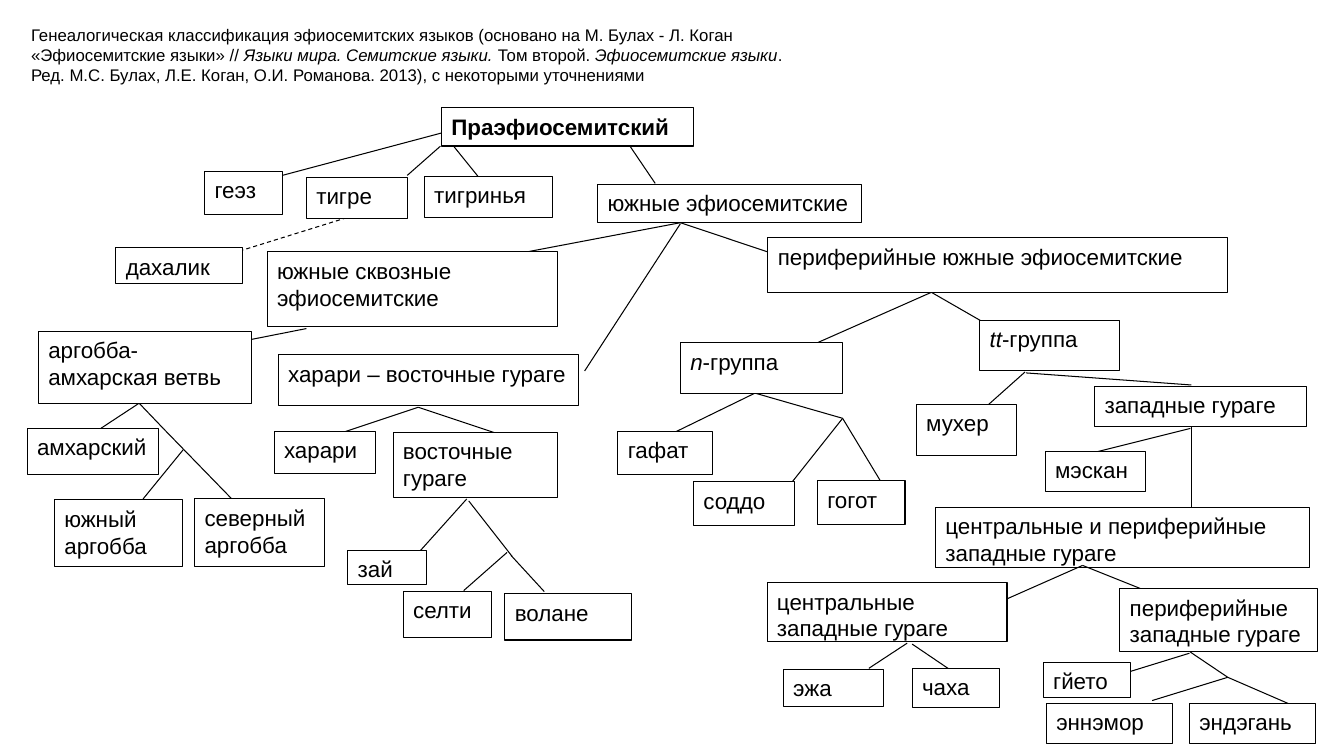
import pptx
import pptx.dml.color
import pptx.enum.dml
import pptx.enum.shapes
import pptx.enum.text
import pptx.oxml.ns
import pptx.util
from lxml import etree

Pt = pptx.util.Pt
BLACK = pptx.dml.color.RGBColor(0, 0, 0)
WHITE = pptx.dml.color.RGBColor(255, 255, 255)
FONT = "Arial"


def write_text(frame, text, size, bold=False):
    """Newlines part the paragraphs, asterisks enclose italics."""
    for index, line in enumerate(text.split("\n")):
        paragraph = frame.paragraphs[0] if index == 0 else frame.add_paragraph()
        paragraph.alignment = pptx.enum.text.PP_ALIGN.LEFT
        for part, words in enumerate(line.split("*")):
            if not words:
                continue
            run = paragraph.add_run()
            run.text = words
            run.font.name = FONT
            run.font.size = Pt(size)
            run.font.color.rgb = BLACK
            run.font.bold = bold
            run.font.italic = part % 2 == 1


def add_language(slide, box, name, x, y, width, height, border=0.75, bold=False):
    language = slide.shapes.add_shape(
        pptx.enum.shapes.MSO_SHAPE.RECTANGLE,
        Pt(box[0] + x), Pt(box[1] + y), Pt(width), Pt(height))
    language.shadow.inherit = False
    language.fill.solid()
    language.fill.fore_color.rgb = WHITE
    language.line.color.rgb = BLACK
    language.line.width = Pt(border)
    frame = language.text_frame
    frame.word_wrap = True
    frame.vertical_anchor = pptx.enum.text.MSO_ANCHOR.TOP
    write_text(frame, name, 16, bold)


def add_branch(slide, box, x1, y1, x2, y2, dashed=False):
    left, top = box
    branch = slide.shapes.add_connector(
        pptx.enum.shapes.MSO_CONNECTOR.STRAIGHT,
        Pt(left + x1), Pt(top + y1), Pt(left + x2), Pt(top + y2))
    branch.line.color.rgb = BLACK
    branch.line.width = Pt(0.75)
    if dashed:
        branch.line.dash_style = pptx.enum.dml.MSO_LINE.DASH
    etree.SubElement(branch._element.spPr, pptx.oxml.ns.qn("a:effectLst"))


def draw_tree(slide, box, branches, languages):
    for branch in branches:
        add_branch(slide, box, *branch)
    for language in languages:
        add_language(slide, box, *language)


def draw_heading(slide, box):
    heading = slide.shapes.add_textbox(*(Pt(length) for length in box))
    frame = heading.text_frame
    frame.word_wrap = False
    frame.vertical_anchor = pptx.enum.text.MSO_ANCHOR.MIDDLE
    write_text(
        frame,
        "Генеалогическая классификация эфиосемитских языков (основано на М. Булах - Л. Коган\n"
        "«Эфиосемитские языки» // *Языки мира. Семитские языки. *Том второй. "
        "*Эфиосемитские языки*.\n"
        "Ред. М.С. Булах, Л.Е. Коган, О.И. Романова. 2013), с некоторыми уточнениями",
        12)


def draw_proto_ethiosemitic(slide, box):
    draw_tree(slide, box, [
        (235.4, 25, 121.6, 55.3),
        (234.6, 34.4, 210.9, 55.3),
        (244, 34.4, 262, 56.7),
        (370, 34.4, 388, 61),
        (406, 89.1, 216.6, 125.1),
        (406, 89.1, 468.6, 110),
        (406, 89.8, 337.6, 195),
        (167.7, 85.5, 93.5, 108.6, True),
    ], [
        ("Праэфиосемитский", 235.4, 7, 180, 27.4, 1, True),
        ("южные эфиосемитские", 347, 61.8, 188.6, 27.4),
        ("геэз", 66.2, 52.4, 55.4, 31),
        ("тигре", 138.9, 56.7, 72, 29.5),
        ("тигринья", 223.1, 56, 91.4, 29.5),
        ("дахалик", 2.8, 107.1, 90.7, 25.2),
    ])


def draw_transversal_south(slide, box):
    draw_tree(slide, box, [
        (200.9, 59.7, 98.6, 79.9),
        (81.4, 113, 54, 131),
        (81.4, 113, 98.6, 131),
        (98.6, 131, 147.6, 181.4),
        (113, 146.1, 84.2, 181.4),
    ], [
        ("южные сквозные эфиосемитские", 172.8, 5, 207.4, 53.3),
        ("аргобба-амхарская ветвь", 9.4, 61.9, 152.6, 51.1),
        ("амхарский", 1.4, 131, 93.6, 33.1, 0.25),
        ("южный аргобба", 20.9, 182.1, 91.4, 47.5),
        ("северный аргобба", 121, 181.4, 92.9, 48.2),
    ])


def draw_harari_east_gurage(slide, box):
    draw_tree(slide, box, [
        (103.8, 40.9, 49.8, 58.9),
        (103.8, 40.9, 157.8, 58.9),
        (138.4, 106.4, 100.9, 148.2),
        (139.8, 107.8, 170.8, 147.4),
        (167.2, 144.6, 136.2, 171.9),
        (170, 146.7, 193.8, 172.6),
    ], [
        ("харари – восточные гураге", 3.7, 3.4, 214.6, 36),
        ("харари", 0.8, 58.2, 72.7, 30.2),
        ("восточные гураге", 85.8, 58.9, 117.4, 46.8),
        ("зай", 53.4, 143.1, 56.2, 24.5),
        ("селти", 93, 172.6, 63.4, 33.1),
        ("волане", 165.7, 174.1, 90.7, 33.1),
    ])


def draw_peripheral_south(slide, box):
    draw_tree(slide, box, [
        (225.3, 43.8, 287.9, 79.8),
        (225.3, 43.8, 143.9, 79.8),
        (99.3, 115.8, 41.7, 143.9),
        (99.3, 115.8, 161.9, 133.8),
        (161.9, 133.8, 125.9, 179.2),
        (161.9, 133.8, 189.3, 179.2),
    ], [
        ("периферийные южные эфиосемитские", 108.6, 4.9, 328.3, 38.9),
        ("*n*-группа", 46, 79.8, 115.9, 36),
        ("гафат", 1.4, 143.2, 67.7, 31),
        ("соддо", 55.4, 179.2, 72, 31),
        ("гогот", 143.9, 178.4, 62.6, 31),
        ("*tt*-группа", 259.8, 64, 100.1, 36),
    ])


def draw_tt_group(slide, box):
    draw_tree(slide, box, [
        (82.2, 0.7, 55.6, 24.4),
        (83, 1.4, 201, 10),
        (200.3, 41, 128.3, 59),
        (201, 38.1, 201, 97.2),
    ], [
        ("мухер", 4.5, 23.7, 71.3, 36.7),
        ("западные гураге", 131.9, 10.8, 151.2, 28.8),
        ("мэскан", 96.6, 57.6, 72, 28.8),
        ("центральные и периферийные\nзападные гураге", 18.2, 97.2, 267.1, 43.2),
    ])


def draw_west_gurage(slide, box):
    draw_tree(slide, box, [
        (228.3, 3.9, 146.9, 39.9),
        (228.3, 3.9, 318.3, 39.9),
        (103, 59.4, 75.6, 77.4),
        (106.6, 60.1, 133.2, 78.1),
        (304.6, 66.6, 262.8, 79.5),
        (305.3, 65.8, 332, 83.8),
        (332, 83.8, 278, 100.4),
        (332, 83.8, 380.2, 104.7),
    ], [
        ("центральные западные гураге", 2.9, 16.2, 171.4, 41.8),
        ("периферийные западные гураге", 254.9, 20.5, 141.1, 44.6),
        ("эжа", 14.4, 78.1, 72, 26.6),
        ("чаха", 106.6, 77.4, 62.6, 28.1),
        ("гйето", 200.2, 73, 62.6, 25.2),
        ("эннэмор", 202.4, 102.6, 90, 28.8),
        ("эндэгань", 304.6, 102.6, 90, 28.8),
    ])


def main():
    deck = pptx.Presentation()
    deck.slide_width, deck.slide_height = Pt(960), Pt(540)
    slide = deck.slides.add_slide(deck.slide_layouts[6])

    # Heading: left, top, width, height
    draw_heading(slide, (15.1, 13.7, 559.4, 51.3))

    # Language family, from the root down: left and top of each part
    draw_proto_ethiosemitic(slide, (80, 70))
    draw_transversal_south(slide, (18, 175))
    draw_harari_east_gurage(slide, (195, 250))
    draw_peripheral_south(slide, (440, 165))
    draw_tt_group(slide, (650, 265))
    draw_west_gurage(slide, (545, 400))

    deck.save("out.pptx")


if __name__ == "__main__":
    main()
